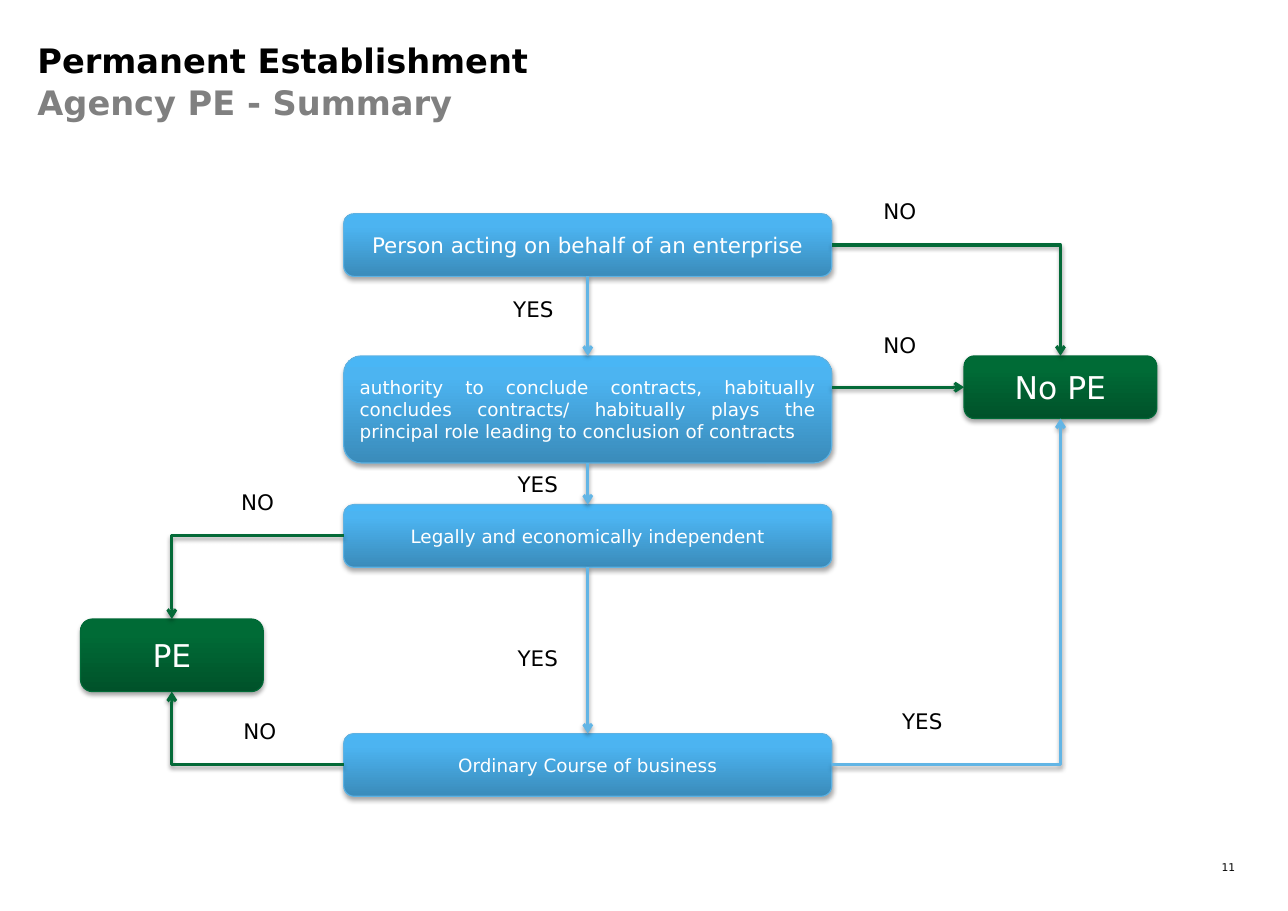
from lxml import etree
from pptx import Presentation
from pptx.dml.color import RGBColor
from pptx.enum.shapes import MSO_CONNECTOR, MSO_SHAPE
from pptx.enum.text import MSO_ANCHOR, MSO_AUTO_SIZE, PP_ALIGN
from pptx.oxml import parse_xml
from pptx.oxml.ns import nsdecls, qn
from pptx.util import Pt

STRAIGHT, ELBOW = MSO_CONNECTOR.STRAIGHT, MSO_CONNECTOR.ELBOW
ROUNDED = MSO_SHAPE.ROUNDED_RECTANGLE
LEFT, CENTER, RIGHT, JUSTIFY = PP_ALIGN.LEFT, PP_ALIGN.CENTER, PP_ALIGN.RIGHT, PP_ALIGN.JUSTIFY
TOP, MIDDLE = MSO_ANCHOR.TOP, MSO_ANCHOR.MIDDLE
NO_AUTOFIT = MSO_AUTO_SIZE.NONE

TOP_SITE, LEFT_SITE, BOTTOM_SITE, RIGHT_SITE = range(4)

FONT = "DejaVu Sans"
BLACK, GREY, WHITE = "000000", "808080", "FFFFFF"
BLUE_LINE, GREEN_LINE = "62B5E5", "046A38"
# Gradient stops at 0, 80 and 100 percent, then the outline colour
BLUE_BOX = (("3A8BBA", "4CB4F1", "49B6F5"), "5DB2E3")
GREEN_BOX = (("00522A", "006B36", "006B37"), "016A37")

QUESTION_LEFT, QUESTION_WIDTH = 224.6, 319
BOX_HEIGHT = 41
AUTHORITY_TOP = 232.6

LABELS = [
    ("YES", 328.3, 190.1), ("YES", 331.2, 304.6), ("YES", 331.2, 418.3),
    ("NO", 150.5, 316.1), ("NO", 151.9, 465.8), ("NO", 570.2, 213.8),
    ("NO", 570.2, 126), ("YES", 582.5, 459.4),
]
LABEL_WIDTHS = {"YES": 47.5, "NO": 39.6}


def color(hex_string):
    return RGBColor.from_string(hex_string)


def add_run(paragraph, text, size=14, fill=BLACK, bold=False):
    run = paragraph.add_run()
    run.text = text
    run.font.name = FONT
    run.font.size = Pt(size)
    run.font.bold = bold
    run.font.color.rgb = color(fill)


def write(shape, text, align=LEFT, anchor=TOP, margins=(7.2, 3.6), wrap=True, **run_format):
    """Format the text frame, add the text and return its paragraph."""
    frame = shape.text_frame
    frame.auto_size = NO_AUTOFIT
    frame.word_wrap = wrap
    frame.vertical_anchor = anchor
    frame.margin_left = frame.margin_right = Pt(margins[0])
    frame.margin_top = frame.margin_bottom = Pt(margins[1])
    paragraph = frame.paragraphs[0]
    paragraph.alignment = align
    add_run(paragraph, text, **run_format)
    return paragraph


def add_shadow(shape, opacity, distance):
    shape._element.spPr.append(parse_xml(
        f'<a:effectLst {nsdecls("a")}><a:outerShdw blurRad="{Pt(3.1)}" dist="{Pt(distance)}" '
        f'dir="5400000" rotWithShape="0"><a:srgbClr val="000000">'
        f'<a:alpha val="{opacity * 1000}"/></a:srgbClr></a:outerShdw></a:effectLst>'))


def add_title(slide):
    title = slide.shapes.title
    title.left, title.top, title.width, title.height = Pt(24.5), Pt(24.5), Pt(795.6), Pt(56.9)
    paragraph = write(title, "Permanent Establishment", margins=(0, 0), size=22, bold=True)
    paragraph.line_spacing = 1.05
    paragraph.add_line_break()
    add_run(paragraph, "Agency PE - Summary", size=22, fill=GREY, bold=True)


def add_text(slide, text, left, top, width, height, **text_format):
    box = slide.shapes.add_textbox(Pt(left), Pt(top), Pt(width), Pt(height))
    write(box, text, **text_format)


def add_box(slide, text, left, top, width, height, style, size, align=CENTER):
    """Add a rounded box with a vertical gradient and a soft shadow."""
    box = slide.shapes.add_shape(ROUNDED, Pt(left), Pt(top), Pt(width), Pt(height))
    stop_colors, outline = style
    stops = "".join(f'<a:gs pos="{position}000"><a:srgbClr val="{stop}"/></a:gs>'
                    for position, stop in zip((0, 80, 100), stop_colors))
    box._element.spPr.append(parse_xml(
        f'<a:gradFill {nsdecls("a")} rotWithShape="1"><a:gsLst>{stops}</a:gsLst>'
        f'<a:lin ang="16200000" scaled="0"/></a:gradFill>'))
    box.line.color.rgb = color(outline)
    box.line.width = Pt(0.75)
    add_shadow(box, 35, 1.8)
    write(box, text, align=align, anchor=MIDDLE, size=size, fill=WHITE)
    return box


def add_question(slide, text, top, height=BOX_HEIGHT, size=12, align=CENTER):
    return add_box(slide, text, QUESTION_LEFT, top, QUESTION_WIDTH, height,
                   BLUE_BOX, size, align)


def add_arrow(slide, kind, line_color, end_box, end_site):
    """Add an arrow whose head is attached to a box."""
    arrow = slide.shapes.add_connector(kind, 0, 0, 0, 0)
    properties = arrow._element.spPr
    if kind == ELBOW:
        properties.find(qn("a:prstGeom")).set("prst", "bentConnector2")
    arrow.line.color.rgb = color(line_color)
    arrow.line.width = Pt(2)
    etree.SubElement(properties.find(qn("a:ln")), qn("a:tailEnd"), type="arrow")
    add_shadow(arrow, 38, 1.6)
    arrow.end_connect(end_box, end_site)
    return arrow


def main():
    presentation = Presentation()
    presentation.slide_width, presentation.slide_height = Pt(841.68), Pt(595.44)
    slide = presentation.slides.add_slide(presentation.slide_layouts[5])
    add_title(slide)

    person = add_question(slide, "Person acting on behalf of an enterprise", 139.7, size=14)
    authority = add_question(
        slide,
        "authority to conclude contracts, habitually concludes contracts/ habitually plays "
        "the principal role leading to conclusion of contracts",
        AUTHORITY_TOP, height=70, align=JUSTIFY)
    independent = add_question(slide, "Legally and economically independent", 329.8)
    business = add_question(slide, "Ordinary Course of business", 479.5)
    no_pe = add_box(slide, "No PE", 630, AUTHORITY_TOP, 126, BOX_HEIGHT, GREEN_BOX, 20.5)
    pe = add_box(slide, "PE", 52.6, 404.6, 119.5, 47.5, GREEN_BOX, 20.5)

    questions = [person, authority, independent, business]
    for question, next_question in zip(questions, questions[1:]):
        arrow = add_arrow(slide, STRAIGHT, BLUE_LINE, next_question, TOP_SITE)
        arrow.begin_connect(question, BOTTOM_SITE)

    for question, site, line_color, outcome, outcome_site in [
        (person, RIGHT_SITE, GREEN_LINE, no_pe, TOP_SITE),
        (business, RIGHT_SITE, BLUE_LINE, no_pe, BOTTOM_SITE),
        (independent, LEFT_SITE, GREEN_LINE, pe, TOP_SITE),
        (business, LEFT_SITE, GREEN_LINE, pe, BOTTOM_SITE),
    ]:
        arrow = add_arrow(slide, ELBOW, line_color, outcome, outcome_site)
        arrow.begin_connect(question, site)

    # The authority box is taller than its outcome, so this arrow starts level with its head
    level_arrow = add_arrow(slide, STRAIGHT, GREEN_LINE, no_pe, LEFT_SITE)
    level_arrow.begin_x = authority.left + authority.width
    level_arrow.begin_y = level_arrow.end_y

    for answer, left, top in LABELS:
        add_text(slide, answer, left, top, LABEL_WIDTHS[answer], 27, wrap=False)
    add_text(slide, "11", 785.5, 562.3, 21.6, 8.6, align=RIGHT, margins=(0, 0), size=7)

    presentation.save("out.pptx")


if __name__ == "__main__":
    main()
